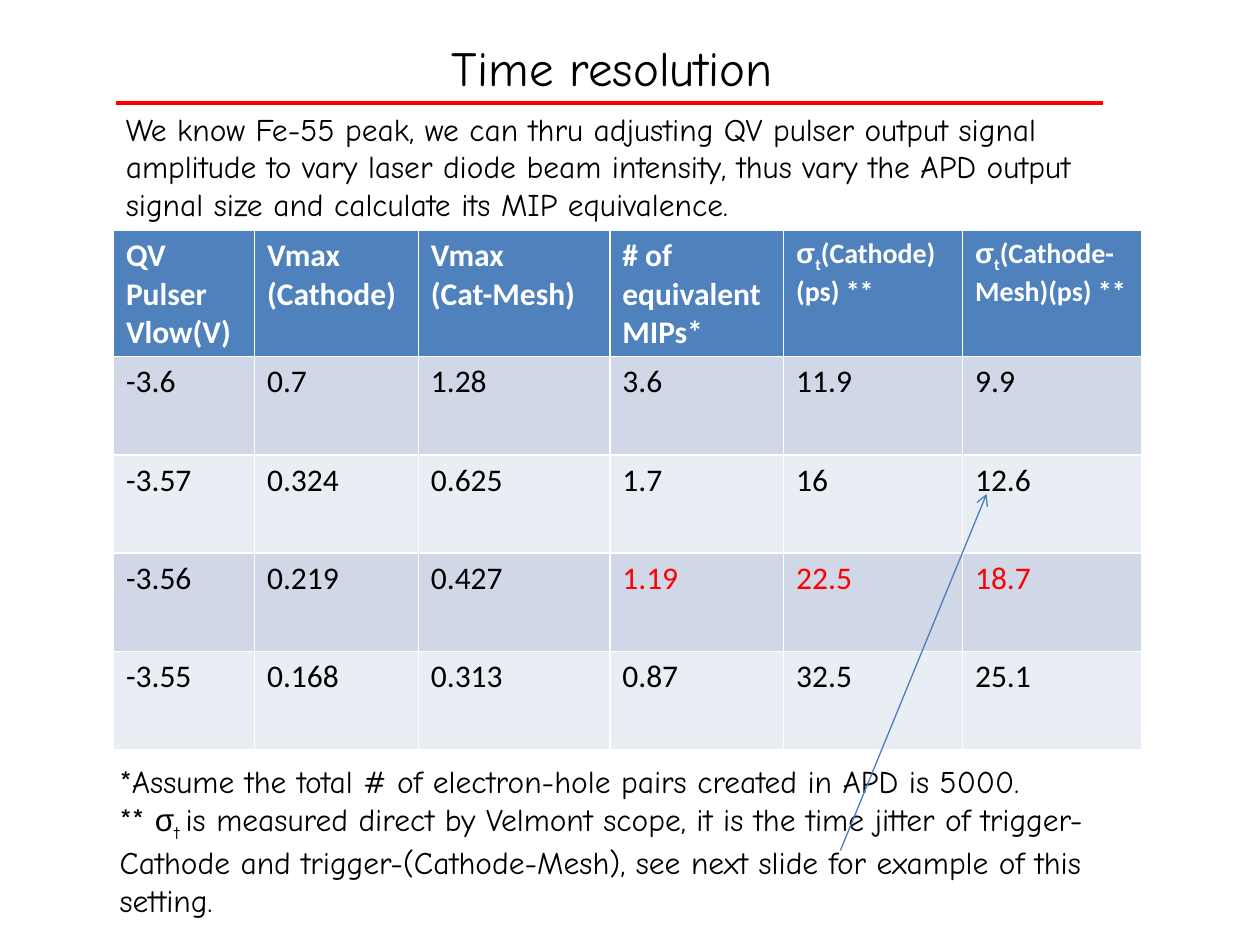
from typing import NamedTuple

from lxml import etree
from pptx import Presentation, util as u
from pptx.dml.color import RGBColor
from pptx.enum import shapes, text
from pptx.oxml import ns

BLACK = RGBColor(0x00, 0x00, 0x00)
WHITE = RGBColor(0xFF, 0xFF, 0xFF)
RED = RGBColor(0xFF, 0x00, 0x00)
HEAD = RGBColor(0x4F, 0x81, 0xBD)
BANDS = RGBColor(0xD0, 0xD8, 0xE8), RGBColor(0xE9, 0xED, 0xF4)
ARROW = RGBColor(0x4B, 0x7E, 0xBC)

COMIC, CALIBRI, ARIAL = "Comic Neue", "Calibri", "Arial"


class Run(NamedTuple):
    words: str
    font: str
    size: float = 18
    color: RGBColor = BLACK
    bold: bool = False
    sub: bool = False


class Rule(NamedTuple):
    start: tuple[float, float]
    end: tuple[float, float]
    color: RGBColor
    width: float
    arrow: bool = False


def write(frame, paras: list[list[Run]], align=None) -> None:
    for i, runs in enumerate(paras):
        para = frame.paragraphs[0] if i == 0 else frame.add_paragraph()
        para.alignment = align
        for item in runs:
            run = para.add_run()
            run.text = item.words
            font = run.font
            font.name, font.size, font.bold = item.font, u.Pt(item.size), item.bold
            font.color.rgb = item.color
            if item.sub:
                font._element.set("baseline", "-25000")


def place(shape, left: float, top: float, width: float, height: float) -> None:
    shape.left, shape.top = u.Inches(left), u.Inches(top)
    shape.width, shape.height = u.Inches(width), u.Inches(height)


def add_note(slide, box: tuple, paras: list[list[Run]]) -> None:
    shape = slide.shapes.add_textbox(*map(u.Inches, box))
    shape.text_frame.word_wrap = True
    write(shape.text_frame, paras)


def add_rule(slide, rule: Rule) -> None:
    line = slide.shapes.add_connector(
        shapes.MSO_CONNECTOR.STRAIGHT, *map(u.Inches, rule.start + rule.end))
    line.line.color.rgb = rule.color
    line.line.width = u.Pt(rule.width)
    if rule.arrow:
        etree.SubElement(line.line._get_or_add_ln(), ns.qn("a:tailEnd"), type="arrow")
    etree.SubElement(line._element.spPr, ns.qn("a:effectLst"))


def head(words: str, size: float = 18, font: str = CALIBRI, sub: bool = False) -> Run:
    return Run(words, font, size, WHITE, True, sub)


def sigma(words: str) -> list[list[Run]]:
    """Head cell that opens with sigma and a lowered t."""
    return [[head("σ", 16, ARIAL), head("t", 16, sub=True), head(words, 16)]]


HEADS = [
    [[head("QV Pulser")], [head("Vlow(V)")]],
    [[head("Vmax")], [head("(Cathode)")]],
    [[head("Vmax")], [head("(Cat-Mesh)")]],
    [[head("# of equivalent MIPs*")]],
    sigma("(Cathode)(ps) **"),
    sigma("(Cathode-Mesh)(ps) **"),
]
ROWS = [
    ["-3.6", "0.7", "1.28", "3.6", "11.9", "9.9"],
    ["-3.57", "0.324", "0.625", "1.7", "16", "12.6"],
    ["-3.56", "0.219", "0.427", "1.19", "22.5", "18.7"],
    ["-3.55", "0.168", "0.313", "0.87", "32.5", "25.1"],
]
MARKED = {(2, 3), (2, 4), (2, 5)}
WIDTHS = [1.12, 1.3, 1.52, 1.38, 1.42, 1.42]
TALL = 0.78


def fill(cell, color: RGBColor, paras: list[list[Run]]) -> None:
    cell.fill.solid()
    cell.fill.fore_color.rgb = color
    write(cell.text_frame, paras)


def add_grid(slide) -> None:
    count = len(ROWS) + 1
    table = slide.shapes.add_table(
        count, len(WIDTHS), u.Inches(0.9), u.Inches(1.83),
        u.Inches(sum(WIDTHS)), u.Inches(TALL * count)).table
    for col, width in zip(table.columns, WIDTHS):
        col.width = u.Inches(width)
    for row in table.rows:
        row.height = u.Inches(TALL)
    for c, paras in enumerate(HEADS):
        fill(table.cell(0, c), HEAD, paras)
    for r, row in enumerate(ROWS):
        for c, value in enumerate(row):
            color = RED if (r, c) in MARKED else BLACK
            fill(table.cell(r + 1, c), BANDS[r % 2], [[Run(value, CALIBRI, color=color)]])


def main() -> None:
    deck = Presentation()
    deck.slide_width, deck.slide_height = u.Inches(10), u.Inches(7.5)
    slide = deck.slides.add_slide(deck.slide_layouts[5])

    title = slide.shapes.title
    place(title, 0.85, 0.25, 8.15, 0.57)
    title.text_frame.auto_size = text.MSO_AUTO_SIZE.NONE
    title.text_frame.vertical_anchor = text.MSO_ANCHOR.TOP
    write(title.text_frame, [[Run("Time resolution ", COMIC, 28)]], text.PP_ALIGN.CENTER)

    add_rule(slide, Rule((0.92, 0.82), (8.75, 0.82), RED, 2.5))
    add_note(slide, (0.9, 0.82, 7.92, 1.01), [[Run(
        "We know Fe-55 peak, we can thru adjusting QV pulser output signal amplitude "
        "to vary laser diode beam intensity, thus vary the APD output signal size "
        "and calculate its MIP equivalence.", COMIC)]])
    add_grid(slide)
    add_note(slide, (0.85, 6, 8.15, 1.31), [
        [Run("*Assume the total # of electron-hole pairs created in APD is 5000.", COMIC)],
        [Run("** ", COMIC), Run("σ", ARIAL), Run("t ", COMIC, sub=True),
         Run("is measured direct by Velmont scope, it is the time jitter of "
             "trigger-Cathode and trigger-(Cathode-Mesh), see next slide for "
             "example of this setting.", COMIC)],
    ])
    add_rule(slide, Rule((6.67, 6.75), (7.83, 3.92), ARROW, 0.75, arrow=True))
    deck.save("out.pptx")


if __name__ == "__main__":
    main()
